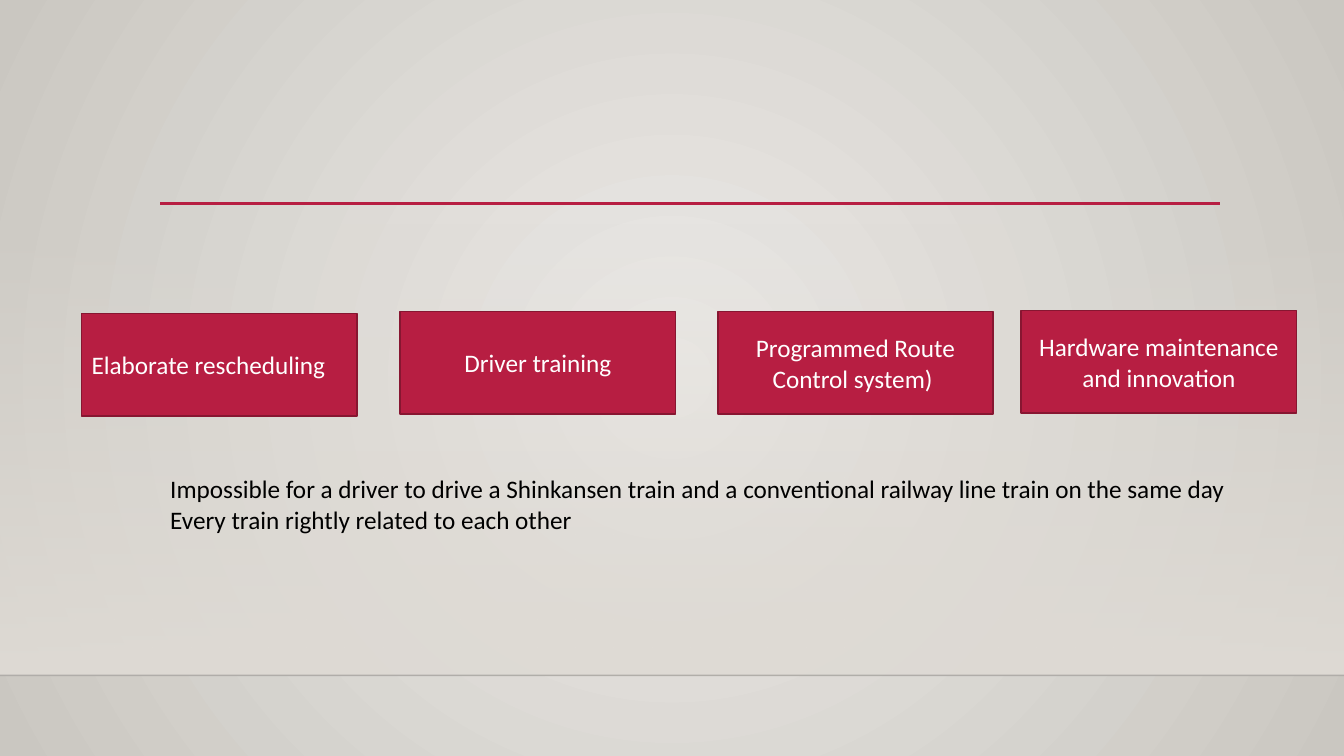
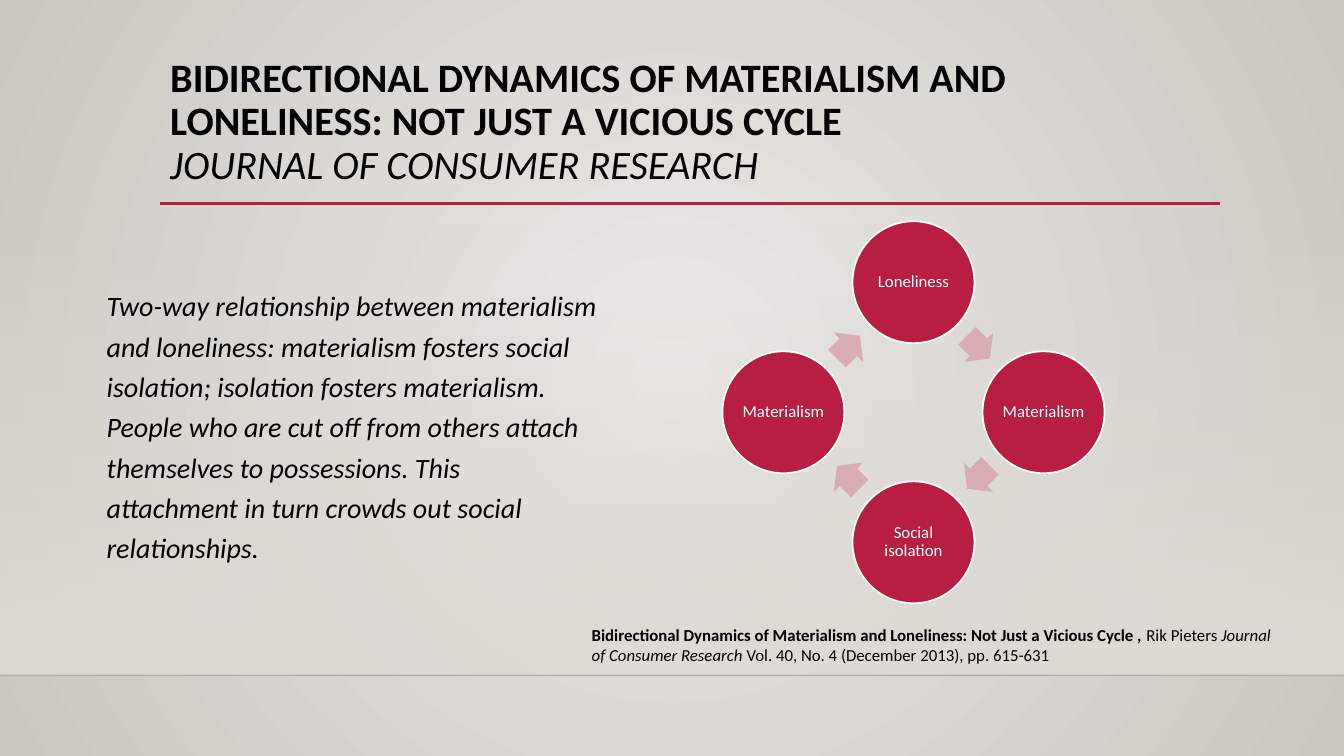
import math

import pptx
import pptx.util
import pptx.dml.color
import pptx.enum.shapes
import pptx.enum.text
import pptx.oxml.ns
from lxml import etree

Inches = pptx.util.Inches
Pt = pptx.util.Pt
SHAPES = pptx.enum.shapes.MSO_SHAPE
ALIGN = pptx.enum.text.PP_ALIGN
ANCHOR = pptx.enum.text.MSO_ANCHOR
qn = pptx.oxml.ns.qn

COLORS = {
    "glow": "ECEAE7", "edge": "CAC7C1", "haze": "DFDBD5",
    "accent": "B71E42", "accent_dark": "871631", "accent_pale": "D8ACB0",
    "floor": "000001", "text": "000000", "white": "FFFFFF",
}


def rgb(name):
    return pptx.dml.color.RGBColor.from_string(COLORS[name])


def set_alpha(element, percent):
    """Make the first colour below an element see-through."""
    color = next(element.iter(qn("a:srgbClr")))
    etree.SubElement(color, qn("a:alpha")).set("val", str(percent * 1000))


class Builder:
    """Holds the style, the deck and the current page."""

    font = "Calibri"
    width, height = 13.33, 7.5

    def __init__(self):
        self.deck = pptx.Presentation()
        self.deck.slide_width = Inches(self.width)
        self.deck.slide_height = Inches(self.height)
        self.page = None

    def new_page(self):
        self.page = self.deck.slides.add_slide(self.deck.slide_layouts[6])
        # Radial background
        gradient = self.gradient(self.page.background.fill, self.page.element,
                                 "glow", "edge")
        gradient.remove(gradient.find(qn("a:lin")))
        radial = etree.SubElement(gradient, qn("a:path"))
        radial.set("path", "circle")
        center = etree.SubElement(radial, qn("a:fillToRect"))
        for side in "ltrb":
            center.set(side, "50000")
        # Haze that fades in towards the floor line
        haze = self.shape(SHAPES.RECTANGLE, 0, 2.21, self.width, 4.49)
        fade = self.gradient(haze.fill, haze.element, "haze", "haze")
        haze.fill.gradient_angle = 270
        set_alpha(fade, 0)
        # Floor line and title rule
        floor = self.rule(0, self.width, 6.7, "floor", 1)
        set_alpha(floor.element, 20)
        self.rule(1.59, 12.1, 2.02, "accent", 2.5)

    def gradient(self, fill, owner, start, end):
        fill.gradient()
        for stop, name in zip(fill.gradient_stops, (start, end)):
            stop.color.rgb = rgb(name)
        return next(owner.iter(qn("a:gradFill")))

    def rule(self, left, right, y, color, weight):
        line = self.page.shapes.add_connector(
            pptx.enum.shapes.MSO_CONNECTOR.STRAIGHT,
            Inches(left), Inches(y), Inches(right), Inches(y))
        line.line.color.rgb = rgb(color)
        line.line.width = Pt(weight)
        etree.SubElement(line.element.spPr, qn("a:effectLst"))
        return line

    def shape(self, kind, left, top, width, height, fill=None, line=None):
        shape = self.page.shapes.add_shape(
            kind, Inches(left), Inches(top), Inches(width), Inches(height))
        shape.shadow.inherit = False
        if fill:
            shape.fill.solid()
            shape.fill.fore_color.rgb = rgb(fill)
        if line:
            shape.line.color.rgb = rgb(line)
            shape.line.width = Pt(1.25)
        else:
            shape.line.fill.background()
        return shape

    def fill_frame(self, frame, paras, size, color="text", align=ALIGN.LEFT,
                   spacing=None):
        """Each para is a list of (text, style) spans; style holds b or i."""
        frame.word_wrap = True
        for index, spans in enumerate(paras):
            para = frame.add_paragraph() if index else frame.paragraphs[0]
            para.alignment = align
            if spacing:
                para.line_spacing = spacing
            para.font.name = self.font
            para.font.size = Pt(size)
            para.font.color.rgb = rgb(color)
            for text, style in spans:
                if text == "\n":
                    para.add_line_break()
                    continue
                span = para.add_run()
                span.text = text
                if style:
                    span.font.bold = "b" in style
                    span.font.italic = "i" in style

    def text(self, left, top, width, height, paras, size, spacing=None):
        box = self.page.shapes.add_textbox(
            Inches(left), Inches(top), Inches(width), Inches(height))
        self.fill_frame(box.text_frame, paras, size, spacing=spacing)

    def card(self, left, top, label, align=ALIGN.CENTER):
        card = self.shape(SHAPES.RECTANGLE, left, top, 2.73, 1.02,
                          "accent", "accent_dark")
        card.text_frame.vertical_anchor = ANCHOR.MIDDLE
        self.fill_frame(card.text_frame, [[(label, "")]], 18, "white", align)

    def cycle(self, center_x, center_y, radius, labels):
        """Circles clockwise from the top, with arrows midway between them."""
        size, arrow_width, arrow_height = 1.21, 0.32, 0.41
        step = 360 / len(labels)
        spots = []
        for index in range(len(labels)):
            angle = math.radians(index * step)
            spots.append((center_x + radius * math.sin(angle),
                          center_y - radius * math.cos(angle)))
        for index, (label, (x, y)) in enumerate(zip(labels, spots)):
            circle = self.shape(SHAPES.OVAL, x - size / 2, y - size / 2,
                                size, size, "accent", "white")
            frame = circle.text_frame
            frame.vertical_anchor = ANCHOR.MIDDLE
            frame.margin_left = frame.margin_right = Inches(0.02)
            frame.margin_top = frame.margin_bottom = Inches(0.02)
            self.fill_frame(frame, [[(label, "")]], 12, "white",
                            ALIGN.CENTER, 0.9)

            next_x, next_y = spots[(index + 1) % len(spots)]
            arrow = self.shape(
                SHAPES.RIGHT_ARROW, (x + next_x - arrow_width) / 2,
                (y + next_y - arrow_height) / 2, arrow_width, arrow_height,
                "accent_pale")
            arrow.adjustments[0] = 0.6
            arrow.adjustments[1] = 0.5
            arrow.rotation = (index + 0.5) * step


def operations_page(builder):
    builder.new_page()
    # Four measures
    builder.card(0.81, 3.11, "Elaborate rescheduling", ALIGN.LEFT)
    builder.card(3.97, 3.09, "Driver training")
    builder.card(7.12, 3.09, "Programmed Route Control system) ")
    builder.card(10.13, 3.08, "Hardware maintenance and innovation")
    # Remarks
    builder.text(1.59, 4.65, 10.74, 1.01, [
        [("Impossible for a driver to drive a Shinkansen train and a "
          "conventional railway line train on the same day", "")],
        [("Every train rightly related to each other", "")],
    ], 18)


def loneliness_page(builder):
    builder.new_page()
    # Title
    builder.text(1.59, 0.52, 10.5, 1.15, [[
        ("BIDIRECTIONAL DYNAMICS OF MATERIALISM AND LONELINESS: "
         "NOT JUST A VICIOUS CYCLE", "b"),
        ("\n", ""),
        ("JOURNAL OF CONSUMER RESEARCH", "i"),
    ]], 28.8, 0.9)
    # Cycle diagram
    builder.cycle(9.06, 4.09, 1.29, [
        "Loneliness", "Materialism", "Social isolation", "Materialism"])
    # Citation
    builder.text(5.77, 6.15, 7, 0.71, [[
        ("Bidirectional Dynamics of Materialism and Loneliness: "
         "Not Just a Vicious Cycle , ", "b"),
        ("Rik Pieters ", ""),
        ("Journal of Consumer Research ", "i"),
        ("Vol. 40, No. 4 (December 2013), pp. 615-631", ""),
    ]], 12)
    # Summary
    builder.text(0.96, 2.75, 5.07, 4.39, [[
        ("Two-way relationship between materialism and loneliness: "
         "materialism fosters social isolation; isolation fosters "
         "materialism. People who are cut off from others attach themselves "
         "to possessions. This attachment in turn crowds out social "
         "relationships.", "i"),
    ]], 20, 1.2)


def main():
    builder = Builder()
    operations_page(builder)
    loneliness_page(builder)
    builder.deck.save("out.pptx")


if __name__ == "__main__":
    main()
